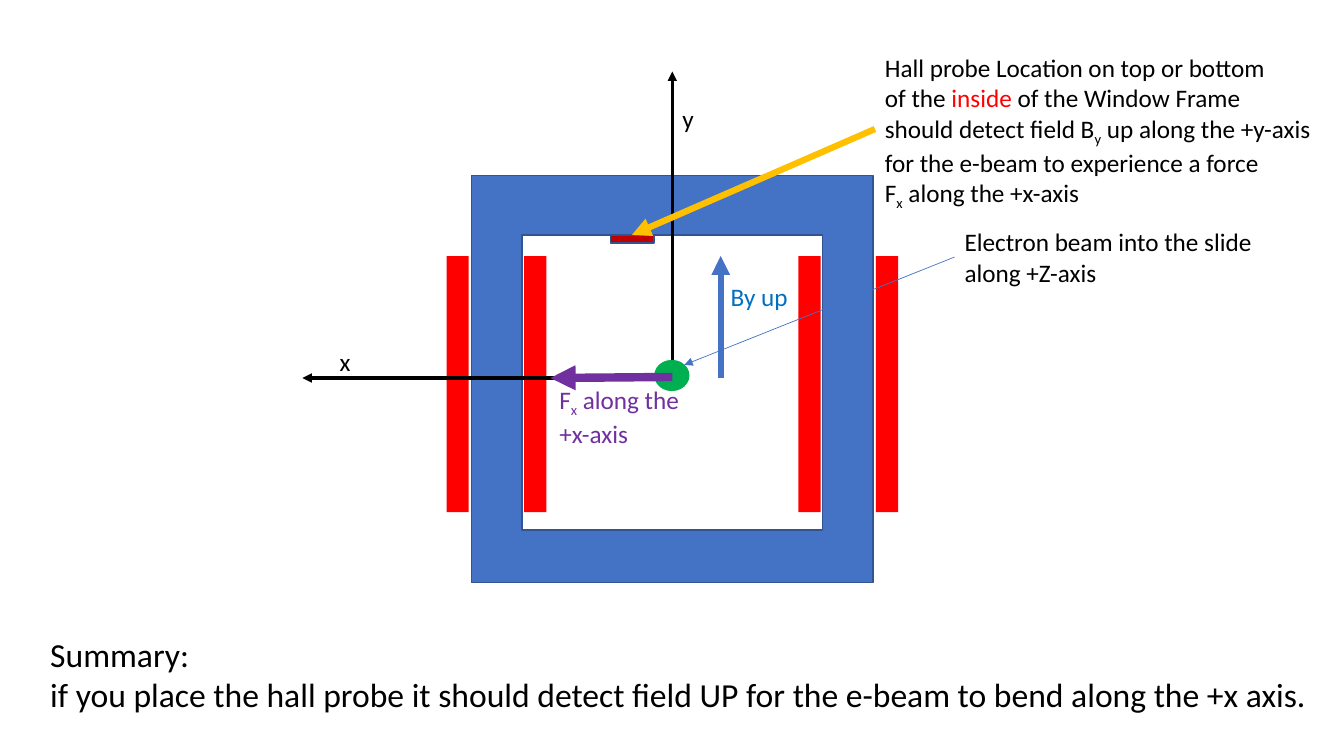
from dataclasses import dataclass
from typing import NamedTuple

from lxml import etree
from pptx import Presentation
from pptx.dml.color import RGBColor
from pptx.enum.shapes import MSO_CONNECTOR, MSO_SHAPE
from pptx.enum.text import MSO_AUTO_SIZE
from pptx.oxml.ns import qn
from pptx.util import Inches, Length, Pt

RECTANGLE = MSO_SHAPE.RECTANGLE
OVAL = MSO_SHAPE.OVAL
STRAIGHT = MSO_CONNECTOR.STRAIGHT
GROW = MSO_AUTO_SIZE.SHAPE_TO_FIT_TEXT
NO_RESIZE = MSO_AUTO_SIZE.NONE

GRID_STEP = 0.1
COLUMNS, ROWS = 133.33, 75

BLACK, WHITE, RED = "000000", "FFFFFF", "FF0000"
BLUE, OUTLINE, PURPLE = "4472C4", "325491", "7030A0"
FIELD_BLUE, GREEN, DARK_RED, GOLD = "0070C0", "00B050", "C00000", "FFC000"


class Area(NamedTuple):
    column: float
    row: float
    columns: float
    rows: float


class Point(NamedTuple):
    column: float
    row: float


class Piece(NamedTuple):
    text: str
    color: str | None = None
    subscript: bool = False


@dataclass(frozen=True)
class Part:
    area: Area
    fill: str
    outline: str | None = None
    outline_width: float = 1
    geometry: MSO_SHAPE = RECTANGLE


@dataclass(frozen=True)
class Arrow:
    start: Point
    end: Point
    color: str
    width: float


@dataclass(frozen=True)
class Label:
    area: Area
    lines: list[list[Piece]]
    color: str = BLACK
    size: float = 18
    wrap: bool = False


def grid(steps: float) -> Length:
    return Inches(steps * GRID_STEP)


def rgb(color: str) -> RGBColor:
    return RGBColor.from_string(color)


def draw_part(slide, part: Part) -> None:
    shape = slide.shapes.add_shape(part.geometry, *map(grid, part.area))
    shape.shadow.inherit = False
    shape.fill.solid()
    shape.fill.fore_color.rgb = rgb(part.fill)
    if part.outline:
        shape.line.color.rgb = rgb(part.outline)
        shape.line.width = Pt(part.outline_width)
    else:
        shape.line.fill.background()


def draw_arrow(slide, arrow: Arrow) -> None:
    connector = slide.shapes.add_connector(
        STRAIGHT, *map(grid, (*arrow.start, *arrow.end))
    )
    connector.line.color.rgb = rgb(arrow.color)
    connector.line.width = Pt(arrow.width)
    outline = connector.line._get_or_add_ln()
    etree.SubElement(outline, qn("a:tailEnd"), type="triangle")
    etree.SubElement(connector._element.spPr, qn("a:effectLst"))


def add_piece(paragraph, text: str, *, color: str, size: float, subscript: bool) -> None:
    run = paragraph.add_run()
    run.text = text
    run.font.name = "Calibri"
    run.font.size = Pt(size)
    run.font.color.rgb = rgb(color)
    if subscript:
        run._r.get_or_add_rPr().set("baseline", "-25000")


def draw_label(slide, label: Label) -> None:
    frame = slide.shapes.add_textbox(*map(grid, label.area)).text_frame
    frame.word_wrap = label.wrap
    frame.auto_size = GROW
    for index, line in enumerate(label.lines):
        paragraph = frame.add_paragraph() if index else frame.paragraphs[0]
        for piece in line:
            add_piece(
                paragraph,
                piece.text,
                color=piece.color or label.color,
                size=label.size,
                subscript=piece.subscript,
            )


COIL_TOP, COIL_WIDTH, COIL_HEIGHT, COIL_PITCH = 25.4, 2.2, 25.4, 7.7
COIL_PAIRS = (79.2, 44.3)
ORIGIN = Point(66.7, 37.5)

WINDOW_FRAME = [
    Part(Area(46.8, 17.4, 39.8, 40.4), BLUE, OUTLINE),
    Part(Area(51.8, 23.3, 29.8, 29.3), WHITE, OUTLINE),
]
COILS = [
    Part(Area(left + side * COIL_PITCH, COIL_TOP, COIL_WIDTH, COIL_HEIGHT), RED)
    for left in COIL_PAIRS
    for side in range(2)
]
AXES = [
    Arrow(ORIGIN, Point(30, ORIGIN.row), BLACK, 2.25),
    Arrow(ORIGIN, Point(ORIGIN.column, 7.1), BLACK, 2.25),
]
BEAM_AND_PROBE = [
    Part(Area(64.9, 35.7, 3.5, 3.1), GREEN, geometry=OVAL),
    Part(Area(60.6, 23.3, 4.3, 0.8), DARK_RED, OUTLINE),
]
FIELD_FORCE_AND_POINTERS = [
    Arrow(Point(71.5, ORIGIN.row), Point(71.5, COIL_TOP), BLUE, 4.5),
    Arrow(Point(94.7, 25.5), Point(67.9, 36.2), BLUE, 0.5),
    Arrow(Point(ORIGIN.column, 37.4), Point(54.6, ORIGIN.row), PURPLE, 6),
    Arrow(Point(86.8, 12.8), Point(62.7, 23.3), GOLD, 4.5),
]
SUB_X = Piece("x", subscript=True)
SUB_Y = Piece("y", subscript=True)
LABELS = [
    Label(Area(32.7, 33.9, 3.1, 4), [[Piece("x")]]),
    Label(Area(66.7, 9.8, 3.1, 4), [[Piece("y")]], wrap=True),
    Label(
        Area(94.7, 22, 30.8, 7.1),
        [[Piece("Electron beam into the slide")], [Piece("along +Z-axis")]],
    ),
    Label(Area(71.5, 27.4, 7.7, 4), [[Piece("By up")]], FIELD_BLUE),
    Label(
        Area(54.5, 37.6, 14.7, 7.1),
        [[Piece("F"), SUB_X, Piece(" along the")], [Piece("+x-axis")]],
        PURPLE,
    ),
    Label(
        Area(86.8, 4.7, 44.9, 16.2),
        [
            [Piece("Hall probe Location on top or bottom")],
            [Piece("of the "), Piece("inside", RED), Piece(" of the Window Frame")],
            [Piece("should detect field B"), SUB_Y, Piece(" up along the +y-axis")],
            [Piece("for the e-beam to experience a force")],
            [Piece("F"), SUB_X, Piece(" along the +x-axis")],
        ],
    ),
    Label(
        Area(4, 62.4, 126.9, 9.1),
        [
            [Piece("Summary:")],
            [
                Piece(
                    "if you place the hall probe it should detect field UP "
                    "for the e-beam to bend along the +x axis."
                )
            ],
        ],
        size=24,
    ),
]


def main() -> None:
    presentation = Presentation()
    presentation.slide_width = grid(COLUMNS)
    presentation.slide_height = grid(ROWS)
    slide = presentation.slides.add_slide(presentation.slide_layouts[6])
    for part in WINDOW_FRAME + COILS:
        draw_part(slide, part)
    for axis in AXES:
        draw_arrow(slide, axis)
    for part in BEAM_AND_PROBE:
        draw_part(slide, part)
    for arrow in FIELD_FORCE_AND_POINTERS:
        draw_arrow(slide, arrow)
    for label in LABELS:
        draw_label(slide, label)
    presentation.save("out.pptx")


if __name__ == "__main__":
    main()
